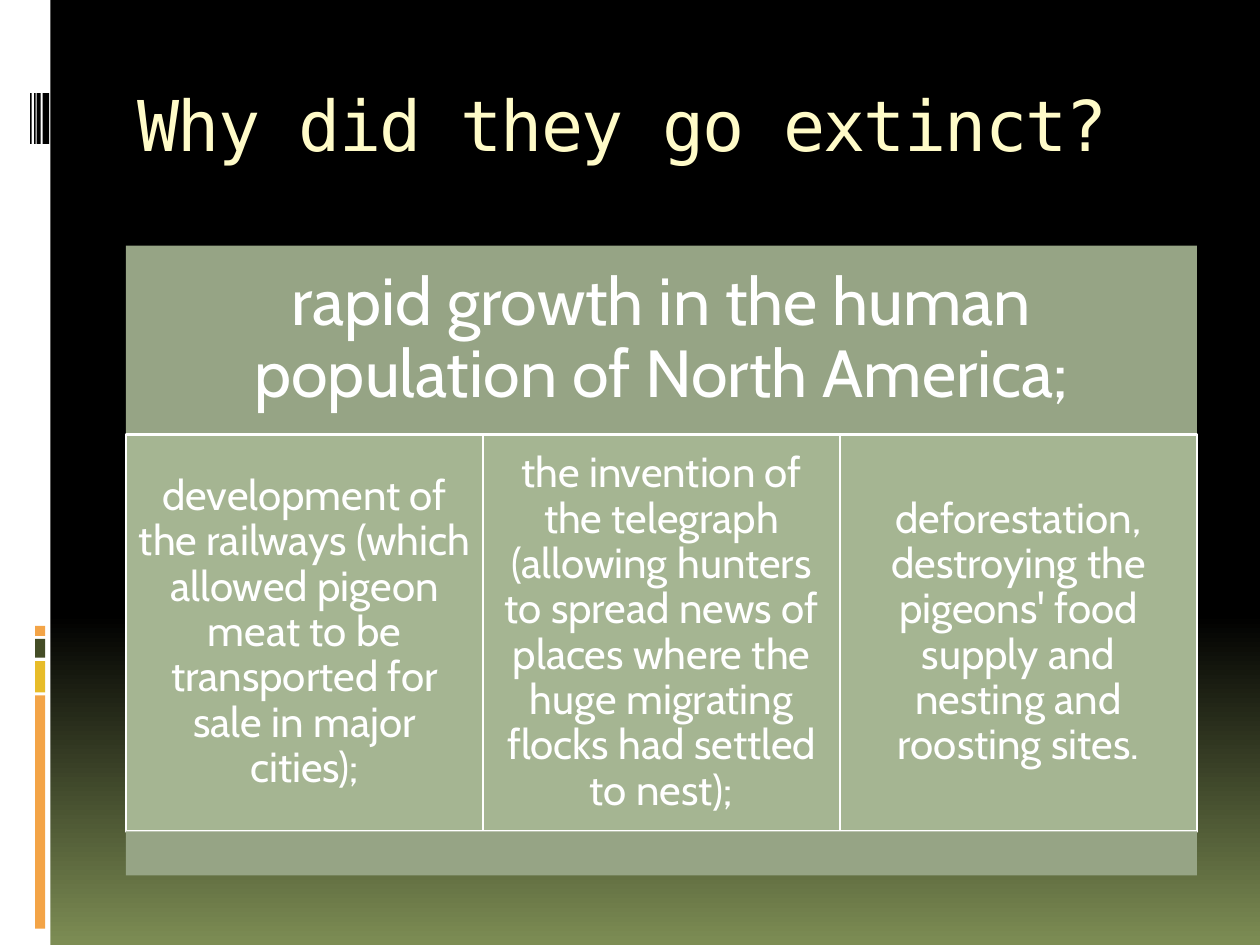
from pptx import Presentation
from pptx.dml.color import RGBColor
from pptx.enum.shapes import MSO_SHAPE as Shape
from pptx.enum.text import MSO_ANCHOR as Anchor, MSO_AUTO_SIZE as AutoSize, PP_ALIGN as Align
from pptx.util import Cm, Pt


def paint(color_format, hex_color):
    color_format.rgb = RGBColor.from_string(hex_color)


def write(shape, text, font="Cabin", size=24, color="FFFFFF", align=Align.CENTER,
          anchor=Anchor.MIDDLE, inset=0.25, line_spacing=0.9, tracking=None):
    frame = shape.text_frame
    frame.text = text
    frame.word_wrap = True
    frame.auto_size = AutoSize.NONE
    frame.vertical_anchor = anchor
    frame.margin_left = frame.margin_right = Cm(inset)
    frame.margin_top = frame.margin_bottom = Cm(inset)
    paragraph = frame.paragraphs[0]
    paragraph.alignment = align
    paragraph.line_spacing = line_spacing
    run = paragraph.runs[0]
    run.font.name = font
    run.font.size = Pt(size)
    paint(run.font.color, color)
    if tracking is not None:
        run.font._element.set("spc", str(tracking))


def add_block(left, top, width, height, fill, border=None):
    block = slide.shapes.add_shape(Shape.RECTANGLE, Cm(left), Cm(top), Cm(width), Cm(height))
    block.shadow.inherit = False
    block.fill.solid()
    paint(block.fill.fore_color, fill)
    if border:
        paint(block.line.color, border)
        block.line.width = Pt(1.5)
    else:
        block.line.fill.background()
    return block


prs = Presentation()
prs.slide_width, prs.slide_height = Cm(25.4), Cm(19.05)
slide = prs.slides.add_slide(prs.slide_layouts[5])

backdrop = slide.background.fill
backdrop.gradient()
backdrop.gradient_angle = 270
for stop, (position, color) in zip(backdrop.gradient_stops, [(0.65, "000000"), (1, "7D8D54")]):
    stop.position = position
    paint(stop.color, color)

add_block(0, 0, 1.02, 19.05, "FFFFFF")
for top, height, color in [(14.02, 4.7, "F3A447"), (13.33, 0.63, "E7BC29"),
                           (12.88, 0.38, "444D26"), (12.62, 0.2, "F3A447")]:
    add_block(0.71, top, 0.2, height, color)
for left, width in [(0.86, 0.13), (0.74, 0.08), (0.69, 0.03), (0.61, 0.03)]:
    add_block(left, 1.88, width, 1.02, "000000")

content_left, content_width = 2.54, 21.59

title = slide.shapes.title
title.left, title.top = Cm(content_left), Cm(1.42)
title.width, title.height = Cm(content_width), Cm(2.54)
write(title, "Why did they go extinct?", font="DejaVu Sans Mono", size=40, color="FFFBC8",
      align=Align.LEFT, anchor=Anchor.TOP, inset=0.23, line_spacing=1, tracking=-100)

main_cause = add_block(content_left, 4.95, content_width, 3.81, "96A485")
write(main_cause, "rapid growth in the human population of North America;", size=38, inset=0.4)

causes = [
    "development of the railways (which allowed pigeon meat to be transported "
    "for sale in major cities);",
    "the invention of the telegraph (allowing hunters to spread news of places "
    "where the huge migrating flocks had settled to nest);",
    "deforestation, destroying the pigeons' food supply and nesting and roosting sites.",
]
cause_width = content_width / len(causes)
for column, cause in enumerate(causes):
    panel = add_block(content_left + column * cause_width, 8.76, cause_width, 8,
                      "A5B592", border="FFFFFF")
    write(panel, cause)

add_block(content_left, 16.76, content_width, 0.89, "96A485")

prs.save("out.pptx")
